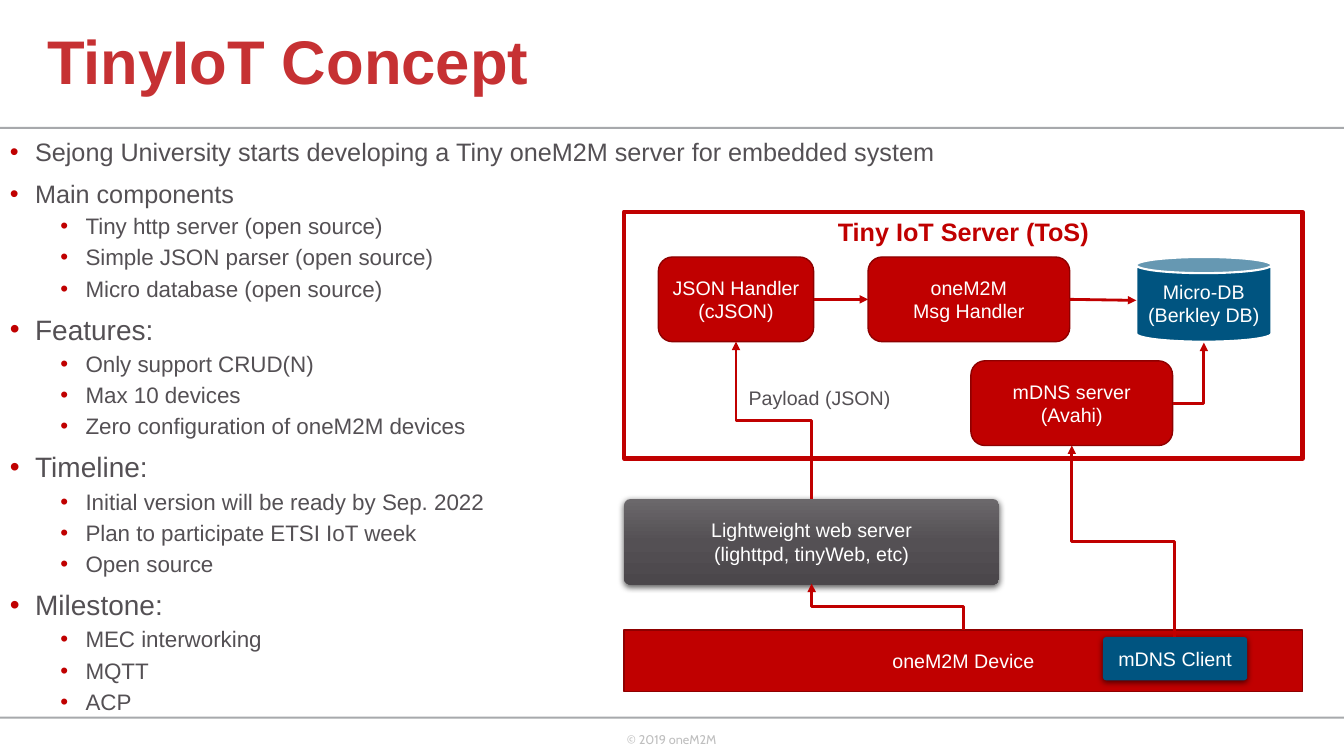
from copy import deepcopy

from lxml import etree
from pptx import Presentation
from pptx import util as u
from pptx.dml.color import RGBColor
from pptx.enum import shapes, text
from pptx.oxml import ns

RED = RGBColor(0xC0, 0x00, 0x00)
EDGE = RGBColor(0x8E, 0x00, 0x00)
TITLE = RGBColor(0xC6, 0x31, 0x33)
BLUE = RGBColor(0x00, 0x54, 0x80)
INK = RGBColor(0x54, 0x50, 0x54)
RULE = RGBColor(0xA7, 0xA9, 0xAC)
PALE = RGBColor(0xBF, 0xBF, 0xBF)
WHITE = RGBColor(0xFF, 0xFF, 0xFF)
BLACK = RGBColor(0x00, 0x00, 0x00)
GREYS = [RGBColor(0x6B, 0x68, 0x6B), INK, RGBColor(0x4B, 0x47, 0x4B)]

KIND = shapes.MSO_SHAPE
LINK = shapes.MSO_CONNECTOR
MID = text.MSO_ANCHOR.MIDDLE
TOP = text.MSO_ANCHOR.TOP
CENTER = text.PP_ALIGN.CENTER
LEFT = text.PP_ALIGN.LEFT

POINTS = [
    (18, "Sejong University starts developing a Tiny oneM2M server for embedded system", []),
    (18, "Main components", ["Tiny http server (open source)",
                             "Simple JSON parser (open source)",
                             "Micro database (open source)"]),
    (20, "Features:", ["Only support CRUD(N)", "Max 10 devices",
                       "Zero configuration of oneM2M devices"]),
    (20, "Timeline:", ["Initial version will be ready by Sep. 2022",
                       "Plan to participate ETSI IoT week", "Open source"]),
    (20, "Milestone:", ["MEC interworking", "MQTT", "ACP"]),
]


def px(n):
    return u.Emu(round(n * 9144))


def add(parent, tag, **attrs):
    node = etree.SubElement(parent, ns.qn(tag))
    for key, value in attrs.items():
        node.set(key, str(value))
    return node


class Deck:
    """Holds the style and the current slide, and draws each kind of element."""

    font = "Arial"

    def __init__(self):
        self.prs = Presentation()
        self.prs.slide_width, self.prs.slide_height = px(1333), px(750)
        self.slide = self.prs.slides.add_slide(self.prs.slide_layouts[6])

    def run(self, para, words, size, color, bold=False, font=None):
        run = para.add_run()
        run.text = words
        run.font.name = font or self.font
        run.font.size = u.Pt(size)
        run.font.bold = bold
        run.font.color.rgb = color

    def fill(self, frame, lines, size, color, align=CENTER, anchor=MID, **style):
        frame.word_wrap = True
        frame.vertical_anchor = anchor
        for i, words in enumerate(lines):
            para = frame.add_paragraph() if i else frame.paragraphs[0]
            para.alignment = align
            self.run(para, words, size, color, **style)

    def label(self, at, words, size, color, align=LEFT, anchor=TOP, wrap=True, **style):
        frame = self.slide.shapes.add_textbox(*map(px, at)).text_frame
        self.fill(frame, [words], size, color, align, anchor, **style)
        frame.word_wrap = wrap
        return frame

    def list(self, at, points):
        frame = self.slide.shapes.add_textbox(*map(px, at)).text_frame
        frame.word_wrap = True
        rows = []
        for size, head, subs in points:
            rows.append((0, size, head))
            rows += [(1, 16, sub) for sub in subs]
        for i, (level, size, words) in enumerate(rows):
            para = frame.add_paragraph() if i else frame.paragraphs[0]
            props = para._p.get_or_add_pPr()
            props.set("marL", str(px(25 + 50 * level)))
            props.set("indent", str(px(-25)))
            add(add(props, "a:buClr"), "a:srgbClr", val=RED)
            add(props, "a:buFont", typeface=self.font)
            add(props, "a:buChar", char="•")
            para.level = level
            para.line_spacing = 0.9
            para.space_before = u.Pt((5 if level else 10) if i else 0)
            self.run(para, words, size, INK)

    def box(self, kind, at, lines=(), fill=RED, edge=None, width=1, adj=None, shade=False,
            size=14, color=WHITE, anchor=MID, bold=False):
        shape = self.slide.shapes.add_shape(kind, *map(px, at))
        shape.shadow.inherit = False
        if adj is not None:
            shape.adjustments[0] = adj
        if fill is None:
            shape.fill.background()
        elif isinstance(fill, list):
            self.blend(shape, fill)
        else:
            shape.fill.solid()
            shape.fill.fore_color.rgb = fill
        if edge is None:
            shape.line.fill.background()
        else:
            shape.line.color.rgb = edge
            shape.line.width = u.Pt(width)
        if shade:
            glow = add(shape._element.spPr.find(ns.qn("a:effectLst")), "a:outerShdw",
                       blurRad=u.Pt(4.5), dist=u.Pt(1.5), dir=5400000, rotWithShape=0)
            add(add(glow, "a:srgbClr", val=BLACK), "a:alpha", val=63000)
        self.fill(shape.text_frame, lines, size, color, anchor=anchor, bold=bold)

    def blend(self, shape, colors):
        shape.fill.gradient()
        shape.fill.gradient_angle = 270
        stops = shape._element.spPr.find(".//" + ns.qn("a:gsLst"))
        stops.insert(1, deepcopy(stops[0]))
        for i, (stop, color) in enumerate(zip(shape.fill.gradient_stops, colors)):
            stop.color.rgb = color
            stop.position = i / 2

    def arrow(self, start, end, kind=LINK.STRAIGHT):
        line = self.slide.shapes.add_connector(kind, *map(px, start + end))
        line.line.color.rgb = RED
        line.line.width = u.Pt(2)
        add(line.line._get_or_add_ln(), "a:tailEnd", type="triangle")
        props = line._element.spPr
        add(props, "a:effectLst")
        return props

    def rise(self, start, end):
        (x1, y1), (x2, y2) = start, end
        mx, my = (x1 + x2) / 2, (y1 + y2) / 2
        dx, dy = (y1 - y2) / 2, (x1 - x2) / 2
        props = self.arrow((mx - dx, my + dy), (mx + dx, my - dy), LINK.ELBOW)
        props.find(ns.qn("a:xfrm")).set("rot", "16200000")

    def turn(self, start, end):
        props = self.arrow(start, end, LINK.ELBOW)
        props.find(ns.qn("a:prstGeom")).set("prst", "bentConnector2")


def main():
    deck = Deck()
    for y in (126, 711):
        deck.box(KIND.RECTANGLE, (0, y, 1333, 2), fill=RULE)
    deck.label((612, 721, 110, 40), "© 2019 oneM2M", 9, PALE, wrap=False, font="Cabin")
    title = deck.label((37, 0, 859, 128), "TinyIoT Concept", 44, TITLE, anchor=MID, bold=True)
    title.paragraphs[0].line_spacing = 0.9
    deck.list((0, 134, 1280, 583), POINTS)

    deck.box(KIND.RECTANGLE, (619, 625, 673, 61), ["oneM2M Device"], edge=EDGE)
    deck.box(KIND.ROUNDED_RECTANGLE, (619, 495, 372, 85),
             ["Lightweight web server", "(lighttpd, tinyWeb, etc)"],
             fill=GREYS, adj=0.076, shade=True)
    deck.label((690, 378, 246, 34), "Payload (JSON)", 14, INK, CENTER)
    for at, lines in [
        ((653, 255, 154, 84), ["JSON Handler", "(cJSON)"]),
        ((861, 255, 200, 84), ["oneM2M", "Msg Handler"]),
        ((963, 358, 200, 84), ["mDNS server", "(Avahi)"]),
    ]:
        deck.box(KIND.ROUNDED_RECTANGLE, at, lines, edge=EDGE)
    deck.box(KIND.RECTANGLE, (619, 210, 673, 245), ["Tiny IoT Server (ToS)"], fill=None,
             edge=RED, width=3, size=18, color=RED, anchor=TOP, bold=True)
    deck.box(KIND.CAN, (1127, 255, 134, 84), ["Micro-DB", "(Berkley DB)"], fill=BLUE,
             edge=WHITE, width=1.5, adj=0.191)
    deck.box(KIND.ROUNDED_RECTANGLE, (1094, 632, 143, 43), ["mDNS Client"], fill=BLUE,
             adj=0.076, shade=True)

    deck.arrow((807, 297), (861, 297))
    deck.arrow((1061, 297), (1127, 298))
    deck.turn((1163, 400), (1194, 340))
    for start, end in [
        ((805, 495), (730, 339)),
        ((956, 625), (805, 579)),
        ((1165, 632), (1063, 442)),
    ]:
        deck.rise(start, end)
    deck.prs.save("out.pptx")


if __name__ == "__main__":
    main()
